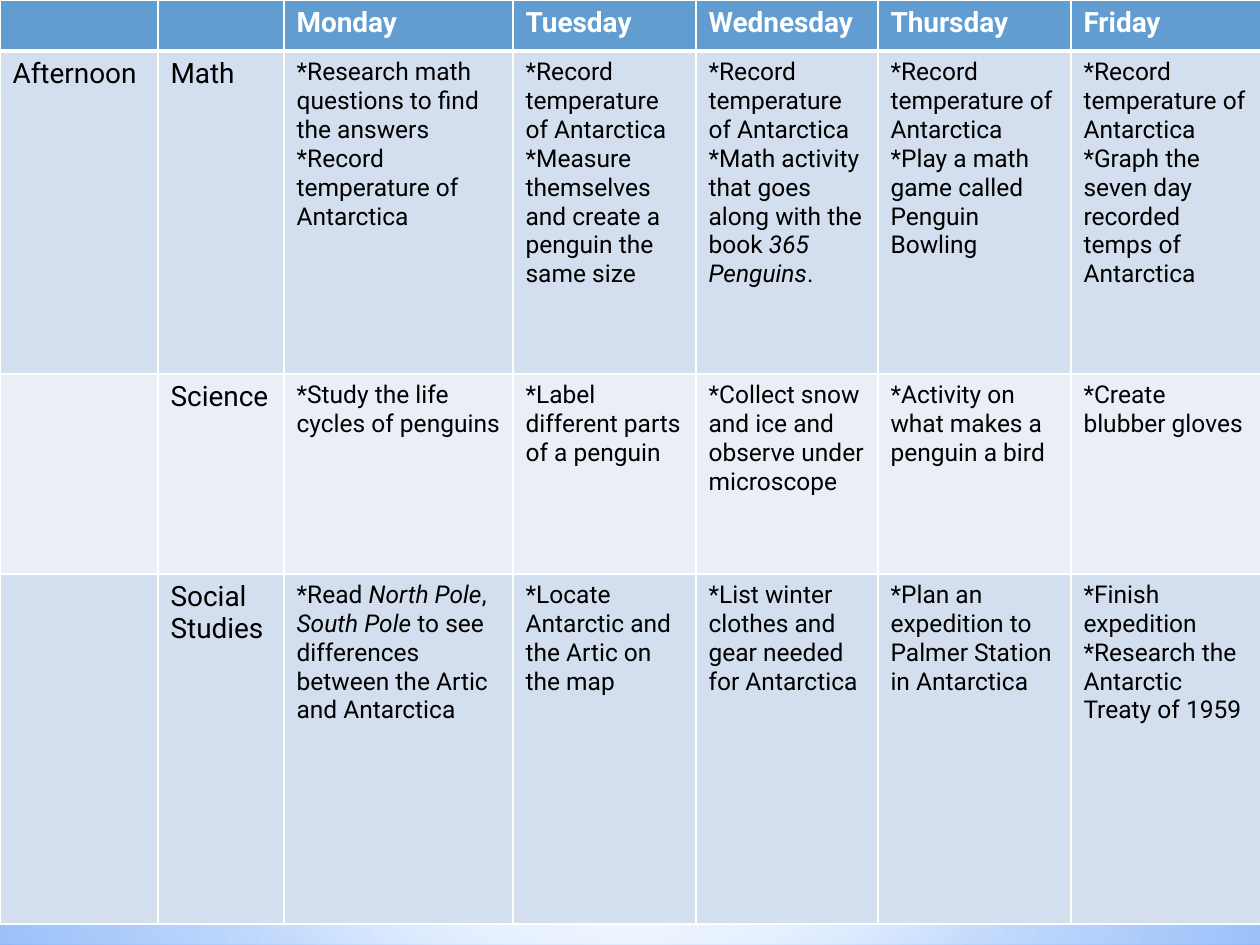
from dataclasses import dataclass

from lxml import etree
from pptx import Presentation
from pptx import util as u
from pptx.dml.color import RGBColor
from pptx.enum import shapes
from pptx.oxml.ns import qn

PX = 914400 / 126


@dataclass(frozen=True)
class Theme:
    font: str = "Roboto"
    label_size: int = 16
    body_size: int = 14
    header_fill: str = "629DD1"
    bands: tuple = ("D3DFEE", "EAEFF7")
    white: str = "FFFFFF"
    body_text: str = "000000"
    haze: str = "ACCBF9"
    sky: str = "95C0FF"
    deep_sky: str = "5599FF"


theme = Theme()


def px(length):
    return u.Emu(round(length * PX))


def set_gradient(fill, stops, center=None):
    """Fill with (position, color, opacity) stops in percent: circular around
    the center rectangle (left, top, right, bottom insets), else top to bottom."""
    fill.gradient()
    gradient = fill.gradient_stops[0]._gs.getparent().getparent()
    gradient.clear()
    gradient.set("rotWithShape", "1")
    stop_list = etree.SubElement(gradient, qn("a:gsLst"))
    for position, color, opacity in stops:
        stop = etree.SubElement(stop_list, qn("a:gs"), pos=str(position * 1000))
        color_element = etree.SubElement(stop, qn("a:srgbClr"), val=color)
        if opacity < 100:
            etree.SubElement(color_element, qn("a:alpha"), val=str(opacity * 1000))
    if center:
        path = etree.SubElement(gradient, qn("a:path"), path="circle")
        insets = {side: str(inset * 1000) for side, inset in zip("ltrb", center)}
        etree.SubElement(path, qn("a:fillToRect"), insets)
    else:
        etree.SubElement(gradient, qn("a:lin"), ang="5400000", scaled="0")


# Each line of a cell is a paragraph; text between underscores is italic.
record = "*Record temperature of Antarctica"
schedule = [
    ["", "", "Monday", "Tuesday", "Wednesday", "Thursday", "Friday"],
    [
        "Afternoon",
        "Math",
        f"*Research math questions to find the answers\n{record}",
        f"{record}\n*Measure themselves and create a penguin the same size",
        f"{record}\n*Math activity that goes along with the book _365 Penguins_.",
        f"{record}\n*Play a math game called Penguin Bowling",
        f"{record}\n*Graph the seven day recorded temps of Antarctica",
    ],
    [
        "",
        "Science",
        "*Study the life cycles of penguins",
        "*Label different parts of a penguin",
        "*Collect snow and ice and observe under microscope",
        "*Activity on what makes a penguin a bird",
        "*Create blubber gloves",
    ],
    [
        "",
        "Social Studies",
        "*Read _North Pole_, _South Pole_ to see differences between the Artic and Antarctica",
        "*Locate Antarctic and the Artic on the map",
        "*List winter clothes and gear needed for Antarctica",
        "*Plan an expedition to Palmer Station in Antarctica",
        "*Finish expedition\n*Research the Antarctic Treaty of 1959",
    ],
]
column_widths = [158, 126, 229, 183, 182, 193, 191]
row_heights = [51, 323, 200, 350]

presentation = Presentation()
presentation.slide_width, presentation.slide_height = px(1260), px(945)
slide = presentation.slides.add_slide(presentation.slide_layouts[6])

# Sky background with layers of haze: shape, top, height, stops, center
white, haze = theme.white, theme.haze
middle = (50, 50, 50, 50)
set_gradient(
    slide.background.fill,
    [(0, theme.sky, 100), (60, white, 100), (100, theme.deep_sky, 100)],
    (20, 10, 20, 60),
)
rectangle, oval = shapes.MSO_SHAPE.RECTANGLE, shapes.MSO_SHAPE.OVAL
horizon_stops = [
    (0, white, 0), (29, white, 30), (45, haze, 40),
    (55, white, 26), (65, haze, 60), (100, white, 0),
]
layers = [
    (rectangle, 703, 242, [(0, white, 91), (37, white, 76), (100, haze, 79)], middle),
    (rectangle, 0, 703, [(0, white, 89), (48, white, 62), (100, haze, 79)], middle),
    (rectangle, 519, 315, horizon_stops, None),
    (oval, 220, 703, [(0, white, 100), (56, white, 0)], middle),
]
for kind, top, height, stops, center in layers:
    layer = slide.shapes.add_shape(kind, 0, px(top), px(1260), px(height))
    layer.shadow.inherit = False
    layer.line.fill.background()
    set_gradient(layer.fill, stops, center)

# Weekly schedule
table = slide.shapes.add_table(
    len(row_heights), len(column_widths), 0, 0, px(sum(column_widths)), px(sum(row_heights))
).table
for column, width in zip(table.columns, column_widths):
    column.width = px(width)
for row, height in zip(table.rows, row_heights):
    row.height = px(height)

for row_index, row_texts in enumerate(schedule):
    is_header = row_index == 0
    row_fill = theme.header_fill if is_header else theme.bands[(row_index - 1) % 2]
    for column_index, cell_text in enumerate(row_texts):
        cell = table.cell(row_index, column_index)
        properties = cell._tc.get_or_add_tcPr()
        for side in "LRTB":
            width = 3 if is_header and side == "B" else 1
            line = etree.SubElement(properties, qn(f"a:ln{side}"), w=str(u.Pt(width)))
            line_fill = etree.SubElement(line, qn("a:solidFill"))
            etree.SubElement(line_fill, qn("a:srgbClr"), val=theme.white)
        cell.fill.solid()
        cell.fill.fore_color.rgb = RGBColor.from_string(row_fill)
        is_label = is_header or column_index < 2
        for line_index, line_text in enumerate(cell_text.split("\n")):
            frame = cell.text_frame
            paragraph = frame.add_paragraph() if line_index else frame.paragraphs[0]
            font = paragraph.font
            font.name = theme.font
            font.size = u.Pt(theme.label_size if is_label else theme.body_size)
            font.bold = is_header
            font.color.rgb = RGBColor.from_string(theme.white if is_header else theme.body_text)
            for part_index, part in enumerate(line_text.split("_")):
                if part:
                    run = paragraph.add_run()
                    run.text = part
                    if part_index % 2:
                        run.font.italic = True

presentation.save("out.pptx")
